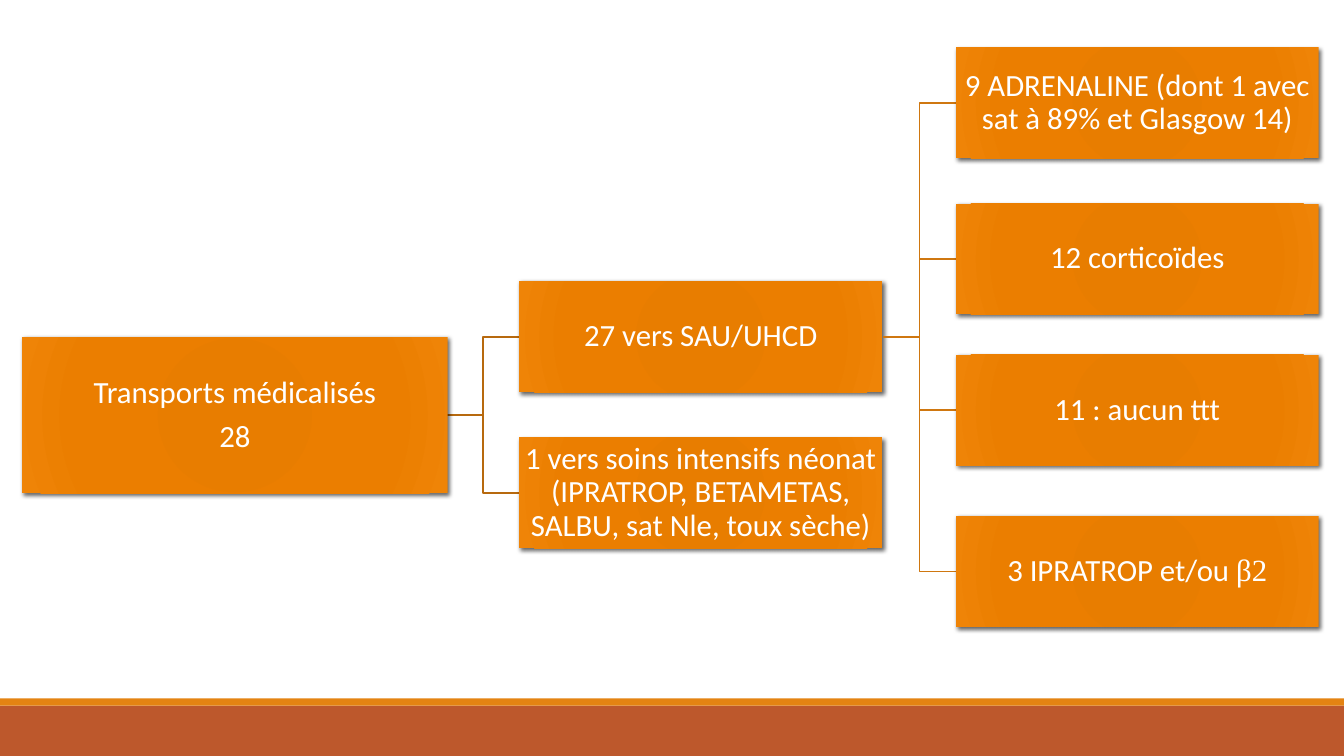
import pptx
import pptx.dml.color
import pptx.enum.shapes
import pptx.enum.text
import pptx.oxml
import pptx.oxml.ns
import pptx.util

Inches = pptx.util.Inches
Pt = pptx.util.Pt


def colour(value):
    """Turn a hex string into a colour."""
    return pptx.dml.color.RGBColor.from_string(value)


def add_run(paragraph, text, *, font="Calibri", size=22, fill="FFFFFF"):
    """Add formatted text to a paragraph."""
    run = paragraph.add_run()
    run.text = text
    run.font.name = font
    run.font.size = Pt(size)
    run.font.color.rgb = colour(fill)


class TreeSlide:
    """Hold the style and the slide of a horizontal tree."""

    gradient = [(0, "E57B00"), (34, "E87D00"), (70, "EB7E00"), (100, "EF8407")]
    margin = Inches(0.02)

    def __init__(self, presentation):
        """Start on a blank layout."""
        self.slide = presentation.slides.add_slide(presentation.slide_layouts[6])

    def rectangle(self, left, top, width, height):
        """Add a rectangle without line or shadow."""
        shape = self.slide.shapes.add_shape(
            pptx.enum.shapes.MSO_SHAPE.RECTANGLE,
            Inches(left), Inches(top), Inches(width), Inches(height))
        shape.shadow.inherit = False
        shape.line.fill.background()
        return shape

    def bar(self, top, height, fill):
        """Add a full-width footer bar."""
        shape = self.rectangle(0, top, 13.33, height)
        shape.fill.solid()
        shape.fill.fore_color.rgb = colour(fill)

    def glow(self, shape):
        """Give a shape the radial gradient and the soft shadow."""
        namespace = pptx.oxml.ns.nsdecls("a")
        stops = "".join(
            f'<a:gs pos="{position * 1000}"><a:srgbClr val="{value}"/></a:gs>'
            for position, value in self.gradient)
        properties = shape._element.spPr
        properties.find(pptx.oxml.ns.qn("a:prstGeom")).addnext(pptx.oxml.parse_xml(
            f'<a:gradFill {namespace} rotWithShape="1"><a:gsLst>{stops}</a:gsLst>'
            '<a:path path="circle"><a:fillToRect l="100000" t="100000" '
            'r="100000" b="100000"/></a:path></a:gradFill>'))
        properties.find(pptx.oxml.ns.qn("a:effectLst")).append(pptx.oxml.parse_xml(
            f'<a:outerShdw {namespace} blurRad="{Pt(3)}" dist="{Pt(2)}" '
            'dir="2700000" rotWithShape="0"><a:srgbClr val="000000">'
            '<a:alpha val="60000"/></a:srgbClr></a:outerShdw>'))

    def card(self, left, centre, paragraphs, width=3.6, height=1.1):
        """Add a tree node around a vertical centre."""
        shape = self.rectangle(left, centre - height / 2, width, height)
        self.glow(shape)
        frame = shape.text_frame
        frame.word_wrap = True
        frame.vertical_anchor = pptx.enum.text.MSO_ANCHOR.MIDDLE
        frame.margin_left = frame.margin_right = self.margin
        frame.margin_top = frame.margin_bottom = self.margin
        for index, runs in enumerate(paragraphs):
            paragraph = frame.add_paragraph() if index else frame.paragraphs[0]
            paragraph.alignment = pptx.enum.text.PP_ALIGN.CENTER
            paragraph.line_spacing = 0.9
            paragraph.space_after = Pt(7.7)
            for text, options in runs:
                add_run(paragraph, text, **options)

    def branch(self, start, end, line):
        """Add an elbow line from a parent to a child."""
        (left, top), (right, bottom) = start, end
        middle = (left + right) / 2
        builder = self.slide.shapes.build_freeform(Inches(left), Inches(top))
        builder.add_line_segments(
            [(Inches(x), Inches(y))
             for x, y in [(middle, top), (middle, bottom), (right, bottom)]],
            close=False)
        shape = builder.convert_to_shape()
        shape.shadow.inherit = False
        shape.fill.background()
        shape.line.color.rgb = colour(line)
        shape.line.width = Pt(1.25)


DESTINATIONS = [
    (3.34, [("27 vers SAU/UHCD", {})]),
    (4.89, [("1 vers soins intensifs néonat (IPRATROP, BETAMETAS, "
             "SALBU, sat Nle, toux sèche)", {})]),
]
TREATMENTS = [
    (1.02, [("9 ADRENALINE (dont 1 avec sat à 89% et Glasgow 14)", {})]),
    (2.57, [("12 corticoïdes", {})]),
    (4.07, [("11 : aucun ttt", {})]),
    (5.67, [("3 IPRATROP et/ou ", {}), ("β2", {"font": "Times New Roman"})]),
]
ROOT_CENTRE = 4.12
DESTINATION_LEFT = 5.15
TREATMENT_LEFT = 9.48


def main():
    """Build and save the slide."""
    presentation = pptx.Presentation()
    presentation.slide_width = Inches(13.33)
    presentation.slide_height = Inches(7.5)
    tree = TreeSlide(presentation)
    tree.bar(7, 0.5, "BD582C")
    tree.bar(6.93, 0.07, "E48312")

    levels = [
        ((4.43, ROOT_CENTRE), DESTINATION_LEFT, DESTINATIONS, "B7690E"),
        ((8.76, DESTINATIONS[0][0]), TREATMENT_LEFT, TREATMENTS, "CF7710"),
    ]
    for parent, left, children, line in levels:
        for centre, runs in children:
            tree.branch(parent, (left, centre), line)
            tree.card(left, centre, [runs])
    tree.card(0.22, ROOT_CENTRE, [[("Transports médicalisés", {})], [("28", {})]],
              width=4.22, height=1.55)
    presentation.save("out.pptx")


if __name__ == "__main__":
    main()
